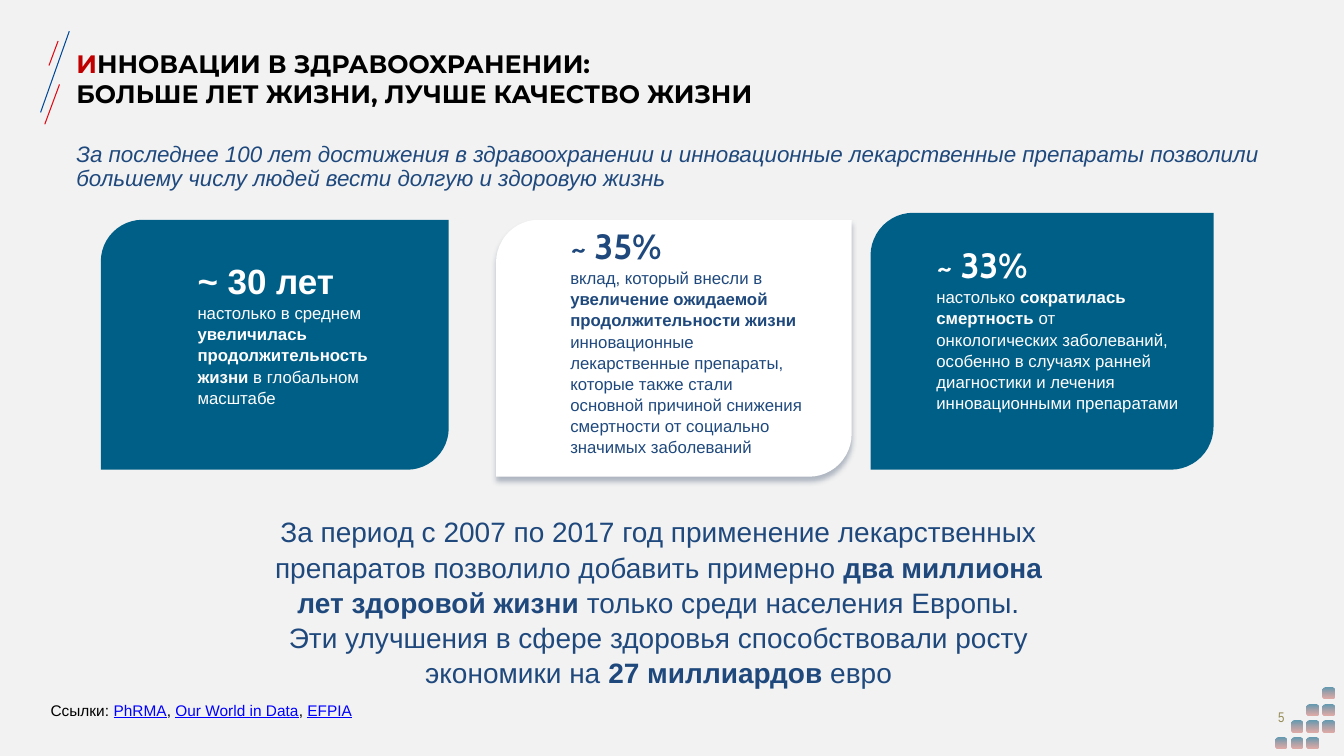
"""Build a slide on what innovation in healthcare has brought."""
import pptx
import pptx.dml.color
import pptx.enum.dml
import pptx.enum.shapes
import pptx.enum.text
import pptx.oxml
import pptx.oxml.ns
import pptx.util

Pt = pptx.util.Pt
SHAPES = pptx.enum.shapes.MSO_SHAPE
ALIGN = pptx.enum.text.PP_ALIGN
ANCHOR = pptx.enum.text.MSO_ANCHOR
NAMESPACE = pptx.oxml.ns.nsdecls("a")
COLORS = {
    "background": "F2F2F2",
    "teal": "005F87",
    "brick": "C3443B",
    "navy": "1F497D",
    "white": "FFFFFF",
    "black": "000000",
    "initial": "C00000",
    "red line": "E20713",
    "blue line": "004898",
    "link": "0000FF",
    "number": "948A54",
    "shadow": "4C5E79",
}


def rgb(name):
    """Return the named colour."""
    return pptx.dml.color.RGBColor.from_string(COLORS[name])


def style(font, size=None, name=None, color=None, bold=None, italic=None, underline=None):
    """Set the given properties of a font."""
    if color:
        font.color.rgb = rgb(color)
    settings = {"size": size and Pt(size), "name": name, "bold": bold,
                "italic": italic, "underline": underline}
    for key, value in settings.items():
        if value is not None:
            setattr(font, key, value)


def add_text(slide, box, runs, font, inset=(7.2, 3.6), anchor=ANCHOR.TOP,
             align=ALIGN.LEFT, spacing=1.0):
    """Add one paragraph of (text, differing font) runs; a newline breaks the line."""
    shape = slide.shapes.add_textbox(*map(Pt, box))
    frame = shape.text_frame
    frame.word_wrap = True
    frame.vertical_anchor = anchor
    frame.margin_left = frame.margin_right = Pt(inset[0])
    frame.margin_top = frame.margin_bottom = Pt(inset[1])
    paragraph = frame.paragraphs[0]
    paragraph.alignment = align
    paragraph.line_spacing = spacing
    style(paragraph.font, **font)
    for text, difference in runs:
        for index, line in enumerate(text.split("\n")):
            if index:
                paragraph.add_line_break()
            if line:
                run = paragraph.add_run()
                run.text = line
                style(run.font, **difference)


def add_slashes(slide, left, top):
    """Draw the three slanted lines beside the title."""
    slashes = [("red line", 6, 24.5, 12.5, 7), ("blue line", 0, 58, 20.5, 0),
               ("red line", 3, 66.5, 13.5, 38)]
    for color, x1, y1, x2, y2 in slashes:
        line = slide.shapes.add_connector(
            pptx.enum.shapes.MSO_CONNECTOR.STRAIGHT,
            Pt(left + x1), Pt(top + y1), Pt(left + x2), Pt(top + y2))
        line.line.color.rgb = rgb(color)
        line.line.width = Pt(0.75)
        line._element.spPr.append(pptx.oxml.parse_xml(f"<a:effectLst {NAMESPACE}/>"))


def add_tiles(slide, left, top):
    """Draw the staircase of gradient tiles in the corner."""
    gradient = (
        f'<a:gradFill {NAMESPACE} rotWithShape="1"><a:gsLst>'
        f'<a:gs pos="0"><a:srgbClr val="{COLORS["teal"]}"><a:alpha val="60000"/></a:srgbClr></a:gs>'
        f'<a:gs pos="100000"><a:srgbClr val="{COLORS["brick"]}"><a:alpha val="40000"/></a:srgbClr></a:gs>'
        '</a:gsLst><a:lin ang="5400000" scaled="0"/></a:gradFill>')
    for row, columns in enumerate([(3,), (2, 3), (1, 2, 3), (0, 1, 2)]):
        for column in columns:
            tile = slide.shapes.add_shape(
                SHAPES.ROUNDED_RECTANGLE, Pt(left + 11.3 * column),
                Pt(top + 12 * row), Pt(8), Pt(8))
            tile.shadow.inherit = False
            tile.line.fill.background()
            tile._element.spPr.prstGeom.addnext(pptx.oxml.parse_xml(gradient))


def add_card(slide, box, text_box, fill, color, figure, figure_font, runs, raised=False):
    """Draw a card with two rounded corners, a large figure and its meaning."""
    card = slide.shapes.add_shape(SHAPES.ROUND_2_DIAG_RECTANGLE, *map(Pt, box))
    card.fill.solid()
    card.fill.fore_color.rgb = rgb(fill)
    card.line.fill.background()
    card.shadow.inherit = False
    if raised:
        effects = card._element.spPr.find(pptx.oxml.ns.qn("a:effectLst"))
        effects.append(pptx.oxml.parse_xml(
            f'<a:outerShdw {NAMESPACE} blurRad="{Pt(4)}" dist="{Pt(3)}" dir="5400000" '
            f'algn="t" rotWithShape="0"><a:srgbClr val="{COLORS["shadow"]}">'
            '<a:alpha val="40000"/></a:srgbClr></a:outerShdw>'))
    x, y, width, height = text_box
    headline = (figure + "\n", {"size": 25, "name": figure_font, "bold": True})
    add_text(slide, (box[0] + x, box[1] + y, width, height), [headline, *runs],
             {"size": 12, "name": "Arial", "color": color}, (7.2, 7.2), spacing=1.05)


def add_header(slide, left, top):
    """Place the slashes, the title and the introduction."""
    add_slashes(slide, left, top)
    add_text(slide, (left + 18.5, top + 11.5, 750, 44),
             [("И", {"color": "initial"}),
              ("ННОВАЦИИ В ЗДРАВООХРАНЕНИИ:\nБОЛЬШЕ ЛЕТ ЖИЗНИ, ЛУЧШЕ КАЧЕСТВО ЖИЗНИ",
               {"color": "black"})],
             {"size": 18, "name": "Montserrat", "bold": True}, anchor=ANCHOR.MIDDLE)
    add_text(slide, (left + 18.5, top + 72, 907, 50.4),
             [("За последнее 100 лет достижения в здравоохранении и инновационные "
               "лекарственные препараты позволили большему числу людей вести долгую "
               "и здоровую жизнь", {})],
             {"size": 16, "name": "Arial", "color": "navy", "italic": True},
             anchor=ANCHOR.MIDDLE, spacing=0.9)


def add_cards(slide, left, top):
    """Place the three cards."""
    bold = {"bold": True}
    add_card(slide, (left, top + 5, 248.5, 178.5), (62, 20, 140, 75), "teal", "white",
             "~ 30 лет", "Arial",
             [("настолько в среднем ", {}),
              ("увеличилась продолжительность жизни ", bold),
              ("в глобальном масштабе", {})])
    add_card(slide, (left + 549.8, top, 245, 183.5), (40, 13.6, 188, 148), "teal", "white",
             "~ 33%", "Cabin",
             [("настолько ", {}), ("сократилась смертность ", bold),
              ("от онкологических заболеваний, особенно в случаях ранней диагностики "
               "и лечения инновационными препаратами", {})])
    add_card(slide, (left + 282.3, top + 5, 254, 183.5), (46, -5, 186, 235), "white", "navy",
             "~ 35%", "Cabin",
             [("вклад, который внесли в ", {}),
              ("увеличение ожидаемой продолжительности жизни ", bold),
              ("инновационные лекарственные препараты, которые также стали основной "
               "причиной снижения смертности от социально значимых заболеваний", {})],
             raised=True)


def add_conclusion(slide, box):
    """Place the centred conclusion."""
    bold = {"bold": True}
    add_text(slide, box,
             [("За период с 2007 по 2017 год применение лекарственных препаратов "
               "позволило добавить примерно ", {}),
              ("два миллиона лет здоровой жизни", bold),
              (" только среди населения Европы.\nЭти улучшения в сфере здоровья "
               "способствовали росту экономики на ", {}),
              ("27 миллиардов ", bold), ("евро", {})],
             {"size": 20, "name": "Arial", "color": "navy"}, (7.2, 7.2),
             align=ALIGN.CENTER, spacing=1.05)


def add_footer(slide, left, top):
    """Place the references, the slide number and the tiles."""
    black = {"color": "black"}
    link = {"color": "link", "underline": True}
    add_text(slide, (left, top + 6, 594, 21),
             [("Ссылки: ", black), ("PhRMA", link), (", ", black),
              ("Our World in Data", link), (", ", black), ("EFPIA", link)],
             {"size": 11, "name": "Arial"})
    add_text(slide, (left + 872.5, top + 6.5, 27.4, 28.8), [("5", {})],
             {"size": 10, "name": "Arial Narrow", "color": "number"},
             anchor=ANCHOR.MIDDLE, align=ALIGN.CENTER)
    add_tiles(slide, left + 882, top)


def main():
    """Build and save the presentation."""
    presentation = pptx.Presentation()
    presentation.slide_width, presentation.slide_height = Pt(960), Pt(540)
    slide = presentation.slides.add_slide(presentation.slide_layouts[6])
    slide.background.fill.solid()
    slide.background.fill.fore_color.rgb = rgb("background")
    add_header(slide, 29, 22.3)
    add_cards(slide, 72, 152)
    add_conclusion(slide, (176.4, 359.3, 588, 50))
    add_footer(slide, 29, 491)
    presentation.save("out.pptx")


if __name__ == "__main__":
    main()
